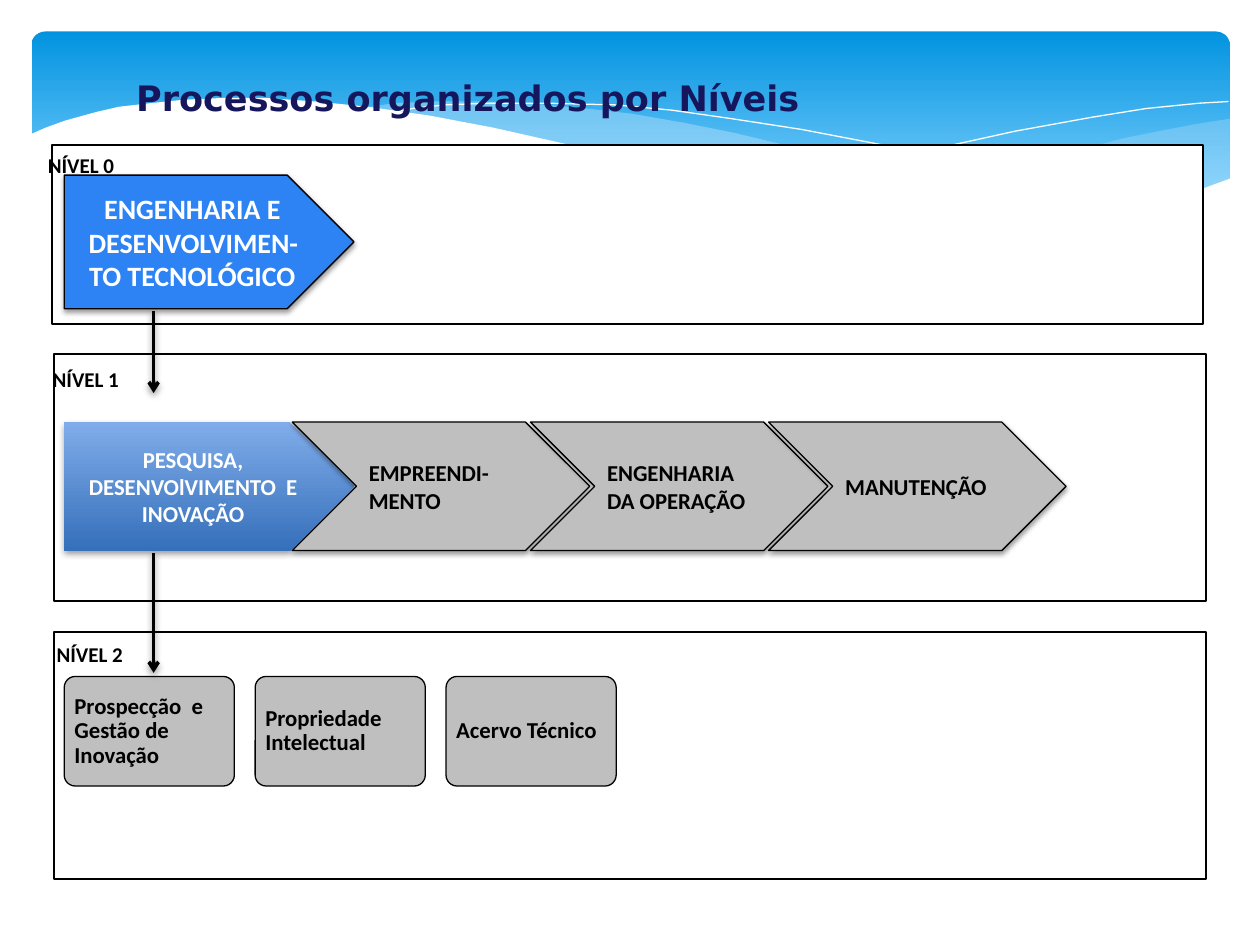
import pptx
import pptx.dml.color
import pptx.enum.shapes
import pptx.enum.text
import pptx.oxml.ns
import pptx.util
from lxml import etree

Pt = pptx.util.Pt
qn = pptx.oxml.ns.qn
Shape = pptx.enum.shapes.MSO_SHAPE
Align = pptx.enum.text.PP_ALIGN
Anchor = pptx.enum.text.MSO_ANCHOR


def color(value):
    return pptx.dml.color.RGBColor.from_string(value)


def add_block(kind, box, fill, line_width, text="", size=13, text_color="000000", align=Align.LEFT):
    shape = slide.shapes.add_shape(kind, *[Pt(length) for length in box])
    shape.shadow.inherit = False
    if len(fill) == 2:
        shape.fill.gradient()
        shape.fill.gradient_angle = 270
        for stop, (position, stop_color) in zip(shape.fill.gradient_stops, fill):
            stop.position = position
            stop.color.rgb = color(stop_color)
    else:
        shape.fill.solid()
        shape.fill.fore_color.rgb = color(fill)
    if line_width:
        shape.line.color.rgb = color("000000")
        shape.line.width = Pt(line_width)
    else:
        shape.line.fill.background()
    frame = shape.text_frame
    frame.vertical_anchor = Anchor.MIDDLE
    frame.text = text
    for paragraph in frame.paragraphs:
        paragraph.alignment = align
        paragraph.font.name = "Calibri"
        paragraph.font.size = Pt(size)
        paragraph.font.bold = True
        paragraph.font.color.rgb = color(text_color)
    return shape


presentation = pptx.Presentation()
presentation.slide_width = Pt(720)
presentation.slide_height = Pt(540)
slide = presentation.slides.add_slide(presentation.slide_layouts[5])

header = add_block(Shape.ROUNDED_RECTANGLE, (18, 18, 684.7, 112.3),
                   [(0, "0293E0"), (0.9, "83D3FE")], 0)
header.adjustments[0] = 0.07

right_wave = [(702, 67.7), (682.6, 71.3), (662.4, 74.9), (641.5, 79.2), (619.9, 85),
              (579.6, 94.3), (542.2, 103), (508.3, 109.4), (475.9, 115.2), (507.6, 118.8),
              (536.4, 121.7), (562.3, 123.5), (586, 123.8), (607.7, 123.1), (627.8, 121.7),
              (645.8, 118.8), (663.1, 115.2), (678.2, 110.9), (693.4, 105.8), (702.7, 101.5),
              (702.7, 67.7)]
middle_wave = [(643, 120.2), (602.6, 114.5), (558, 107.3), (508.3, 96.5), (452.9, 83.5),
               (420.5, 76.3), (389.5, 69.8), (361.4, 64.8), (334.8, 61.9), (302.4, 59),
               (273.6, 57.6), (247.7, 57.6), (225.4, 59), (205.9, 61.9), (232.6, 64.8),
               (260.6, 69.8), (290.9, 76.3), (323.3, 83.5), (381.6, 97.2), (432.7, 108),
               (468, 113.8), (500.4, 118.8), (529.9, 121.7), (556.6, 123.5), (581, 124.6),
               (603.4, 123.8), (624.2, 122.4)]
left_crest = [(222.5, 64.8), (236.2, 61.9), (254.2, 60.5), (278.6, 59), (311.8, 59),
              (352.1, 60.5), (383.8, 63.4), (419, 67.7), (457.9, 74.2), (500.4, 82.1),
              (547.2, 92.2), (598.3, 104.4), (653, 119.5)]
right_crest = [(441.4, 108.7), (470.2, 101.5), (500.4, 93.6), (538.6, 84.2), (580.3, 74.9),
               (623.5, 67), (655.2, 61.9), (684.7, 59), (702, 57.6)]
white_wave = [(703.4, 101.5), (684, 108.7), (662.4, 114.5), (638.6, 119.5), (612, 122.4),
              (582.5, 123.1), (547.9, 122.4), (509.8, 118.8), (466.6, 112.3), (416.9, 103.7),
              (362.2, 92.2), (321.8, 82.1), (281.5, 73.4), (244.8, 66.2), (210.2, 61.2),
              (180, 58.3), (151.9, 56.2), (127.4, 56.2), (105.1, 56.9), (85.7, 59),
              (68.4, 61.2), (54.7, 64.1), (37.4, 69.1), (25.9, 73.4), (16.6, 77),
              (16.6, 161.3), (703.4, 161.3)]

for points, fill, opacity in [(right_wave, "C6E7FC", 29), (middle_wave, "C6E7FC", 40),
                              (left_crest, None, 100), (right_crest, None, 100),
                              (white_wave, "FFFFFF", 100)]:
    builder = slide.shapes.build_freeform(*points[0], scale=Pt(1))
    builder.add_line_segments(points[1:], close=fill is not None)
    wave = builder.convert_to_shape()
    wave.shadow.inherit = False
    if fill:
        wave.fill.solid()
        wave.fill.fore_color.rgb = color(fill)
        wave.line.fill.background()
        fill_color = next(wave.element.iter(qn("a:srgbClr")))
        etree.SubElement(fill_color, qn("a:alpha"), val=str(opacity * 1000))
    else:
        wave.fill.background()
        wave.line.color.rgb = color("FFFFFF")
        wave.line.width = Pt(0)

title = slide.shapes.title
title.element.getparent().append(title.element)
title.left, title.top, title.width, title.height = Pt(70.6), Pt(40.3), Pt(566.6), Pt(31.7)
title.text_frame.text = "Processos organizados por Níveis"
title.text_frame.vertical_anchor = Anchor.TOP
paragraph = title.text_frame.paragraphs[0]
paragraph.alignment = Align.LEFT
paragraph.font.name = "DejaVu Sans"
paragraph.font.size = Pt(20)
paragraph.font.bold = True
paragraph.font.color.rgb = color("16165D")

levels = [(29.5, 82.8, 102.2, 20.2, 83.5), (31, 202.3, 141.1, 23, 205.9),
          (31, 361.4, 141.1, 25.2, 362.9)]
for number, (left, top, height, label_left, label_top) in enumerate(levels):
    add_block(Shape.RECTANGLE, (left, top, 658, height), "FFFFFF", 1.25)
    label = slide.shapes.add_textbox(Pt(label_left), Pt(label_top), Pt(68.4), Pt(21.6))
    label.text_frame.word_wrap = True
    paragraph = label.text_frame.paragraphs[0]
    paragraph.text = f"NÍVEL {number}"
    paragraph.font.name = "Calibri"
    paragraph.font.size = Pt(12)
    paragraph.font.bold = True
    paragraph.font.color.rgb = color("000000")

process = add_block(Shape.PENTAGON, (36.7, 100.1, 165.6, 76.3), "2D83F4", 0.75,
                    "ENGENHARIA E DESENVOLVIMEN-TO TECNOLÓGICO", 16, "FFFFFF", Align.CENTER)
research = add_block(Shape.PENTAGON, (36.7, 241.2, 165.6, 73.4),
                     [(0, "80ACEA"), (1, "3570BA")], 0,
                     "PESQUISA,\nDESENVOlVIMENTO  E INOVAÇÃO", 13, "FFFFFF", Align.CENTER)
shadowed = [(process, 3.1, 1.6), (research, 4, 2)]

for index, text in enumerate(["EMPREENDI-MENTO", "ENGENHARIA DA OPERAÇÃO", "MANUTENÇÃO"]):
    chevron = add_block(Shape.CHEVRON, (167 + index * 136.1, 241.2, 170, 73.4),
                        "BFBFBF", 0.75, text)
    shadowed.append((chevron, 3.1, 1.6))

for index, text in enumerate(["Prospecção  e Gestão de Inovação", "Propriedade Intelectual",
                              "Acervo Técnico"]):
    card = add_block(Shape.ROUNDED_RECTANGLE, (36.7 + index * 109.1, 386.6, 97.2, 62.6),
                     "BFBFBF", 0.75, text)
    card.adjustments[0] = 0.1
    frame = card.text_frame
    frame.margin_left = frame.margin_right = frame.margin_top = frame.margin_bottom = Pt(4)
    frame.paragraphs[0].line_spacing = 0.9

for top, bottom in [(177.8, 224.6), (316.1, 384.5)]:
    arrow = slide.shapes.add_connector(pptx.enum.shapes.MSO_CONNECTOR.STRAIGHT,
                                       Pt(87.8), Pt(top), Pt(87.8), Pt(bottom))
    arrow.line.color.rgb = color("000000")
    arrow.line.width = Pt(2)
    etree.SubElement(arrow.line._get_or_add_ln(), qn("a:tailEnd"), type="arrow")
    etree.SubElement(arrow.element.spPr, qn("a:effectLst"))
    shadowed.append((arrow, 4, 2))

for shape, blur, distance in shadowed:
    effects = shape.element.spPr.find(qn("a:effectLst"))
    shadow = etree.SubElement(effects, qn("a:outerShdw"), blurRad=str(Pt(blur)),
                              dist=str(Pt(distance)), dir="5400000", rotWithShape="0")
    shadow_color = etree.SubElement(shadow, qn("a:srgbClr"), val="000000")
    etree.SubElement(shadow_color, qn("a:alpha"), val="38000")

presentation.save("out.pptx")
